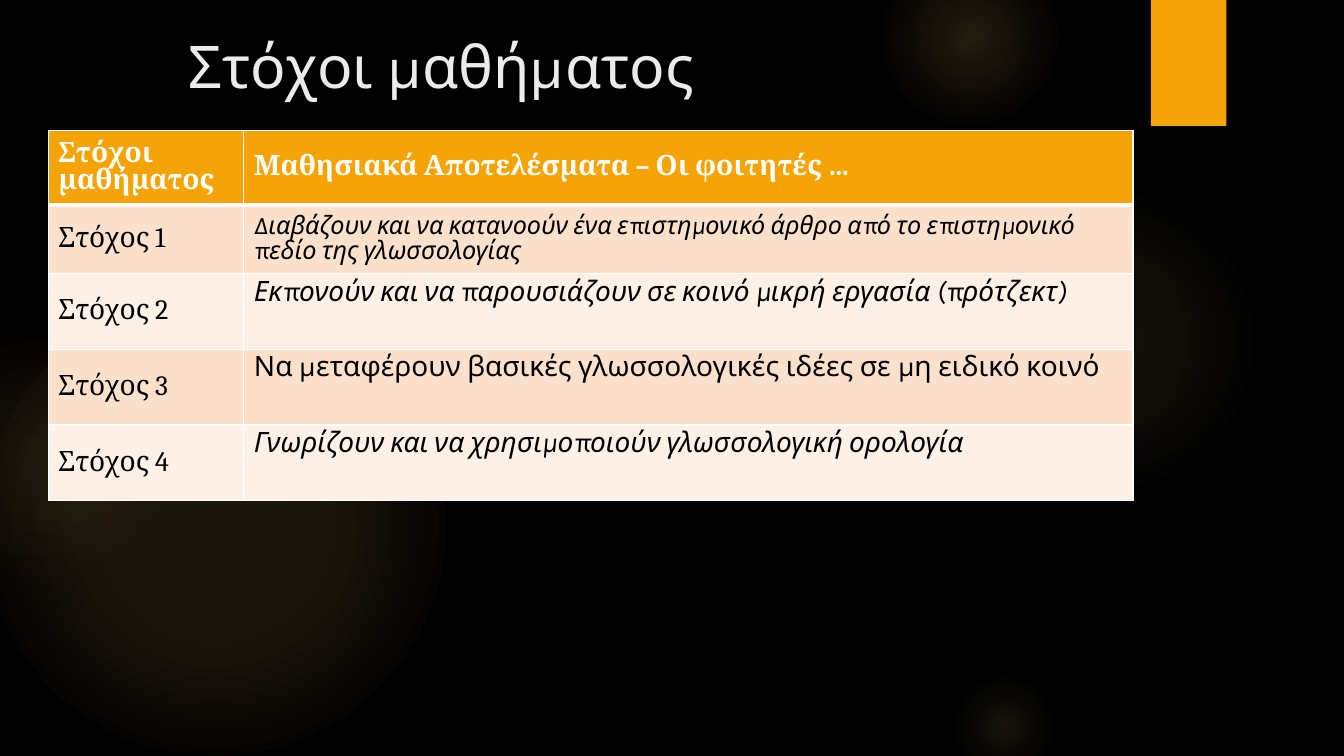
import dataclasses

import pptx
import pptx.dml.color
import pptx.enum.shapes
import pptx.enum.text
import pptx.oxml
import pptx.oxml.ns
import pptx.shapes.autoshape
import pptx.slide
import pptx.table
import pptx.util

RGBColor = pptx.dml.color.RGBColor
BLACK = RGBColor(0x00, 0x00, 0x00)
WHITE = RGBColor(0xFF, 0xFF, 0xFF)
TITLE_GREY = RGBColor(0xEB, 0xEB, 0xEB)
ORANGE = RGBColor(0xF5, 0xA4, 0x08)
BAND_DARK = RGBColor(0xFB, 0xE0, 0xCC)
BAND_LIGHT = RGBColor(0xFD, 0xF0, 0xE7)
GLOW_GOLD = RGBColor(0xFA, 0xC9, 0x6A)
GLOW_CORAL = RGBColor(0xF5, 0x9B, 0x74)

HEADING_FONT = "Cambria"
BODY_FONT = "Karla"

# The slide is a grid of 160 columns and 90 rows, twelve to the inch.
GRID_COLUMNS, GRID_ROWS = 160, 90
TABLE_LEFT, TABLE_TOP = 5.76, 15.5
TABLE_COLUMNS = (23.28, 105.84)
TABLE_ROWS = (8.9, 8.2, 9, 9, 9)


@dataclasses.dataclass(frozen=True)
class Glow:
    """A round glow; stops are (position %, opacity %) from centre to rim."""

    left: float
    top: float
    diameter: float
    stops: tuple[tuple[int, int], ...]
    rim: RGBColor = GLOW_GOLD


@dataclasses.dataclass(frozen=True)
class CellText:
    text: str
    font: str = HEADING_FONT
    size: int = 20
    color: RGBColor = BLACK
    bold: bool = False
    italic: bool = False
    middle: bool = True


GLOWS = (
    Glow(-2, 35, 55, ((0, 11), (36, 10), (75, 0))),
    Glow(-11, 38, 31, ((0, 8), (36, 5), (71, 0)), GLOW_CORAL),
    Glow(113, 22, 37, ((0, 7), (36, 6), (69, 0))),
    Glow(105, -6, 21, ((0, 14), (36, 7), (73, 0))),
    Glow(113, 80, 13, ((0, 10), (31, 5), (66, 0))),
)

HEADER = (
    CellText("Στόχοι μαθήματος", color=WHITE, bold=True),
    CellText("Μαθησιακά Αποτελέσματα – Οι φοιτητές …", color=WHITE, bold=True),
)
OUTCOMES = (
    CellText("Διαβάζουν και να κατανοούν ένα επιστημονικό άρθρο από το "
             "επιστημονικό πεδίο της γλωσσολογίας", BODY_FONT, 18, italic=True),
    CellText("Εκπονούν και να παρουσιάζουν σε κοινό μικρή εργασία (πρότζεκτ)",
             BODY_FONT, italic=True, middle=False),
    CellText("Να μεταφέρουν βασικές γλωσσολογικές ιδέες σε μη ειδικό κοινό",
             BODY_FONT, middle=False),
    CellText("Γνωρίζουν και να χρησιμοποιούν γλωσσολογική ορολογία",
             BODY_FONT, italic=True, middle=False),
)


def grid(units: float) -> pptx.util.Length:
    return pptx.util.Inches(units / 12)


def add_plain_shape(
    slide: pptx.slide.Slide,
    kind: pptx.enum.shapes.MSO_SHAPE,
    left: float, top: float, width: float, height: float,
) -> pptx.shapes.autoshape.Shape:
    shape = slide.shapes.add_shape(kind, grid(left), grid(top), grid(width), grid(height))
    shape.shadow.inherit = False
    shape.line.fill.background()
    return shape


def add_glow(slide: pptx.slide.Slide, glow: Glow) -> None:
    shape = add_plain_shape(slide, pptx.enum.shapes.MSO_SHAPE.OVAL,
                            glow.left, glow.top, glow.diameter, glow.diameter)
    shape.fill.background()
    colors = (GLOW_GOLD, GLOW_GOLD, glow.rim)
    stops = "".join(
        f'<a:gs pos="{position * 1000}"><a:srgbClr val="{color}">'
        f'<a:alpha val="{opacity * 1000}"/></a:srgbClr></a:gs>'
        for (position, opacity), color in zip(glow.stops, colors)
    )
    gradient = pptx.oxml.parse_xml(
        f'<a:gradFill {pptx.oxml.ns.nsdecls("a")} rotWithShape="1">'
        f'<a:gsLst>{stops}</a:gsLst><a:path path="circle">'
        '<a:fillToRect l="50000" t="50000" r="50000" b="50000"/></a:path></a:gradFill>'
    )
    properties = shape.element.spPr
    properties.replace(properties.find(pptx.oxml.ns.qn("a:noFill")), gradient)


def add_title(slide: pptx.slide.Slide, text: str) -> None:
    title = slide.shapes.title
    title.left, title.top = grid(21.24), grid(2.16)
    title.width, title.height = grid(123.48), grid(11.04)
    slide.shapes.element.append(title.element)  # in front of the glows
    frame = title.text_frame
    frame.word_wrap = True
    frame.auto_size = pptx.enum.text.MSO_AUTO_SIZE.NONE
    frame.vertical_anchor = pptx.enum.text.MSO_ANCHOR.MIDDLE
    paragraph = frame.paragraphs[0]
    paragraph.alignment = pptx.enum.text.PP_ALIGN.LEFT
    run = paragraph.add_run()
    run.text = text
    run.font.name = BODY_FONT
    run.font.size = pptx.util.Pt(42)
    run.font.color.rgb = TITLE_GREY


def set_borders(cell: pptx.table._Cell, top: int, bottom: int) -> None:
    """Draw white borders; top and bottom are widths in points."""
    properties = cell._tc.get_or_add_tcPr()
    widths = {"lnL": 1, "lnR": 1, "lnT": top, "lnB": bottom}
    for index, (side, width) in enumerate(widths.items()):
        properties.insert(index, pptx.oxml.parse_xml(
            f'<a:{side} {pptx.oxml.ns.nsdecls("a")} w="{pptx.util.Pt(width)}">'
            f'<a:solidFill><a:srgbClr val="{WHITE}"/></a:solidFill></a:{side}>'
        ))


def fill_cell(cell: pptx.table._Cell, content: CellText, fill: RGBColor) -> None:
    cell.fill.solid()
    cell.fill.fore_color.rgb = fill
    anchors = pptx.enum.text.MSO_ANCHOR
    cell.vertical_anchor = anchors.MIDDLE if content.middle else anchors.TOP
    paragraph = cell.text_frame.paragraphs[0]
    paragraph.line_spacing = 0.85
    run = paragraph.add_run()
    run.text = content.text
    run.font.name = content.font
    run.font.size = pptx.util.Pt(content.size)
    run.font.color.rgb = content.color
    run.font.bold = content.bold
    run.font.italic = content.italic


def add_goals_table(slide: pptx.slide.Slide) -> None:
    goals = [(CellText(f"Στόχος {number}"), outcome)
             for number, outcome in enumerate(OUTCOMES, start=1)]
    table = slide.shapes.add_table(
        len(TABLE_ROWS), len(TABLE_COLUMNS), grid(TABLE_LEFT), grid(TABLE_TOP),
        grid(sum(TABLE_COLUMNS)), grid(sum(TABLE_ROWS)),
    ).table
    for column, width in zip(table.columns, TABLE_COLUMNS):
        column.width = grid(width)
    for row_index, contents in enumerate([HEADER, *goals]):
        table.rows[row_index].height = grid(TABLE_ROWS[row_index])
        band = BAND_DARK if row_index % 2 else BAND_LIGHT
        for cell, content in zip(table.rows[row_index].cells, contents):
            fill_cell(cell, content, band if row_index else ORANGE)
            set_borders(cell, top=3 if row_index == 1 else 1,
                        bottom=1 if row_index else 3)


def main() -> None:
    presentation = pptx.Presentation()
    presentation.slide_width = grid(GRID_COLUMNS)
    presentation.slide_height = grid(GRID_ROWS)
    slide = presentation.slides.add_slide(presentation.slide_layouts[5])
    slide.background.fill.solid()
    slide.background.fill.fore_color.rgb = BLACK
    for glow in GLOWS:
        add_glow(slide, glow)
    tab = add_plain_shape(slide, pptx.enum.shapes.MSO_SHAPE.RECTANGLE, 137, 0, 9, 15)
    tab.fill.solid()
    tab.fill.fore_color.rgb = ORANGE
    add_title(slide, "Στόχοι μαθήματος")
    add_goals_table(slide)
    presentation.save("out.pptx")


if __name__ == "__main__":
    main()
